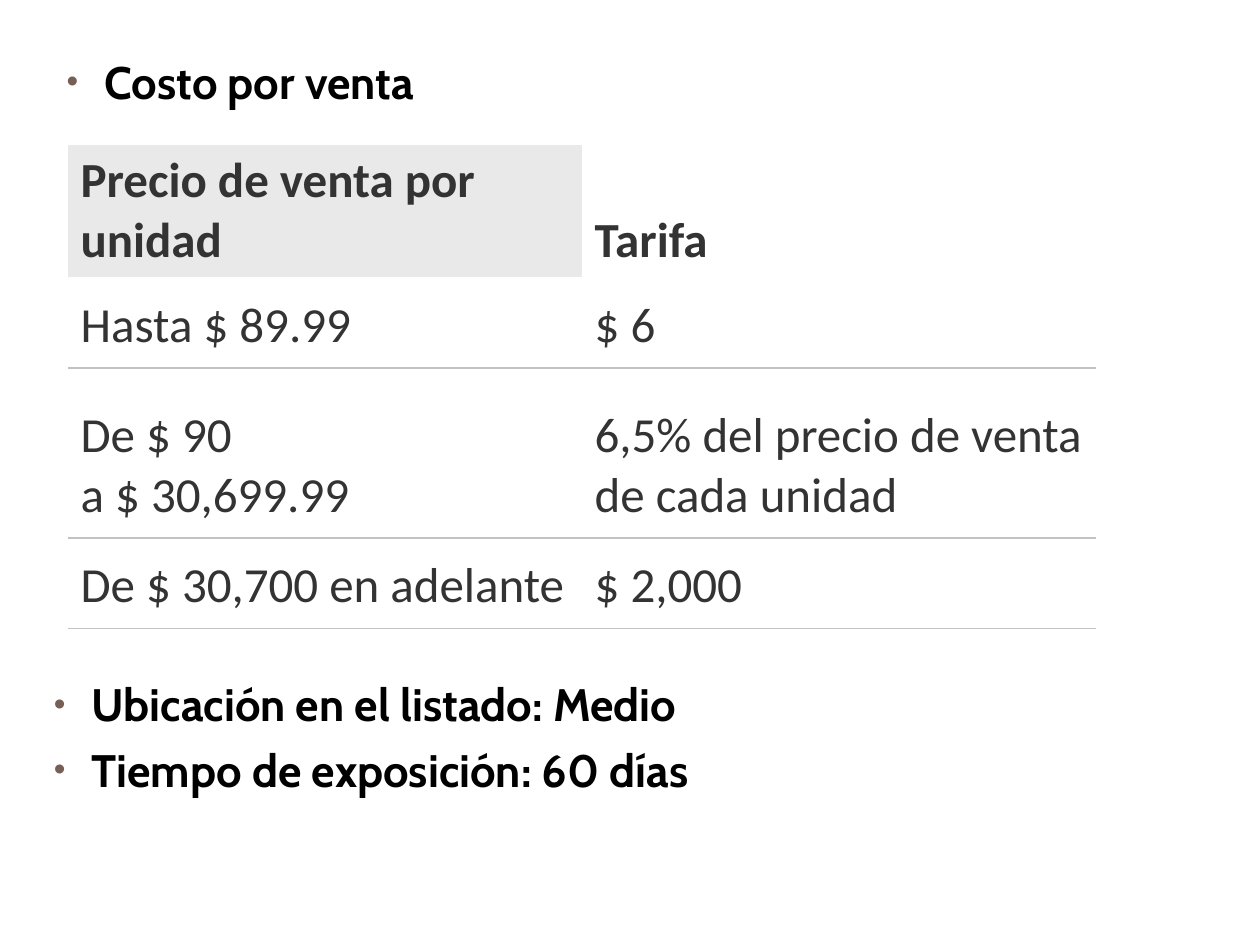
from lxml.etree import SubElement
from pptx import Presentation
from pptx.dml.color import RGBColor
from pptx.enum.text import MSO_ANCHOR
from pptx.oxml.ns import qn
from pptx.util import Inches, Pt

COLORS = {
    "heading": "000000",
    "bullet": "775F55",
    "table_text": "333333",
    "header_fill": "E9E9E9",
    "rule": "C2C2C2",
}
HEADER = ["Precio de venta por unidad", "Tarifa"]
RATES = [
    ["Hasta $ 89.99", "$ 6"],
    ["De $ 90\va $ 30,699.99", "6,5% del precio de venta de cada unidad"],
    ["De $ 30,700 en adelante", "$ 2,000"],
]
ROW_HEIGHTS = [1.05, 0.72, 1.35, 0.72]


def write_text(paragraph, text, font, size, color, bold=False, before=0, after=0):
    paragraph.text = text
    paragraph.space_before = Pt(before)
    paragraph.space_after = Pt(after)
    for run in paragraph.runs:
        run.font.name = font
        run.font.size = Pt(size)
        run.font.bold = bold
        run.font.color.rgb = RGBColor.from_string(COLORS[color])


def add_bullet(paragraph):
    properties = paragraph._p.get_or_add_pPr()
    properties.set("marL", str(Inches(0.3)))
    properties.set("indent", str(Inches(-0.3)))
    bullet_color = SubElement(properties, qn("a:buClr"))
    SubElement(bullet_color, qn("a:srgbClr"), val=COLORS["bullet"])
    SubElement(properties, qn("a:buSzPct"), val="73000")
    SubElement(properties, qn("a:buFont"), typeface="Arial")
    SubElement(properties, qn("a:buChar"), char="•")


def add_bullet_list(slide, box, lines):
    shape = slide.shapes.add_textbox(*map(Inches, box))
    frame = shape.text_frame
    frame.word_wrap = True
    for index, line in enumerate(lines):
        paragraph = frame.add_paragraph() if index else frame.paragraphs[0]
        add_bullet(paragraph)
        write_text(paragraph, line, "Cabin", 26, "heading", bold=True,
                   before=6 if index else 0)


def set_borders(cell, ruled_sides):
    properties = cell._tc.get_or_add_tcPr()
    for position, side in enumerate(("lnL", "lnR", "lnT", "lnB")):
        line = properties.makeelement(qn(f"a:{side}"), {"w": str(Pt(1))})
        properties.insert(position, line)
        if side in ruled_sides:
            fill = SubElement(line, qn("a:solidFill"))
            SubElement(fill, qn("a:srgbClr"), val=COLORS["rule"])
        else:
            SubElement(line, qn("a:noFill"))


def add_rate_table(slide, box):
    rows = [HEADER] + RATES
    shape = slide.shapes.add_table(len(rows), len(HEADER), *map(Inches, box))
    table = shape.table
    table.first_row = False
    table.horz_banding = False
    for row, height in zip(table.rows, ROW_HEIGHTS):
        row.height = Inches(height)
    for row_index, texts in enumerate(rows):
        is_header = row_index == 0
        for column_index, text in enumerate(texts):
            cell = table.cell(row_index, column_index)
            cell.vertical_anchor = MSO_ANCHOR.BOTTOM
            cell.margin_left = cell.margin_right = Inches(0.1)
            cell.margin_top = cell.margin_bottom = Inches(0.05 if is_header else 0.1)
            write_text(cell.text_frame.paragraphs[0], text, "Calibri", 28,
                       "table_text", bold=is_header, after=10)
            if is_header and column_index == 0:
                cell.fill.solid()
                cell.fill.fore_color.rgb = RGBColor.from_string(COLORS["header_fill"])
            else:
                cell.fill.background()
            ruled_sides = [] if is_header else ["lnB"]
            if row_index > 1:
                ruled_sides.append("lnT")
            set_borders(cell, ruled_sides)


def main():
    presentation = Presentation()
    presentation.slide_width = Inches(10)
    presentation.slide_height = Inches(7.5)
    slide = presentation.slides.add_slide(presentation.slide_layouts[6])
    add_bullet_list(slide, (0.43, 0.38, 3.87, 1.12), ["Costo por venta"])
    add_rate_table(slide, (0.54, 1.15, 8.16, sum(ROW_HEIGHTS)))
    add_bullet_list(slide, (0.33, 5.32, 5.63, 1.06),
                    ["Ubicación en el listado: Medio", "Tiempo de exposición: 60 días"])
    presentation.save("out.pptx")


if __name__ == "__main__":
    main()
